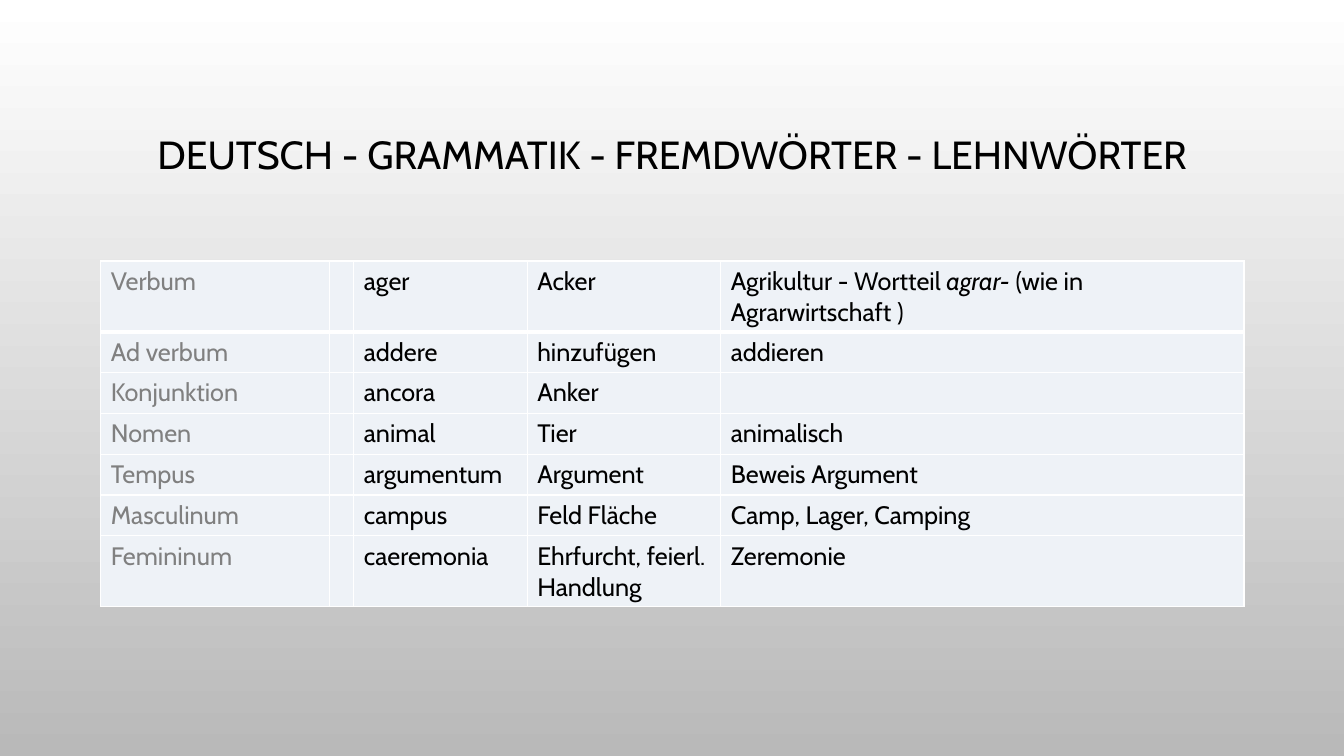
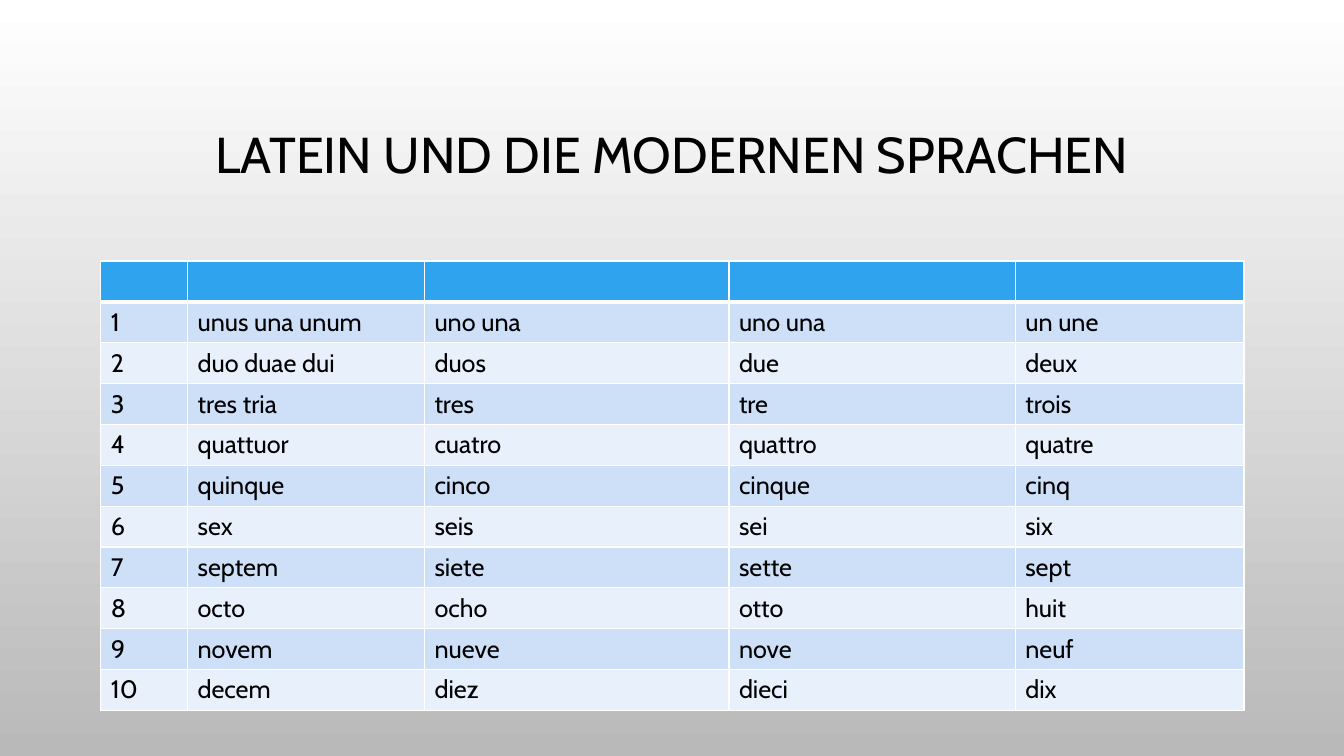
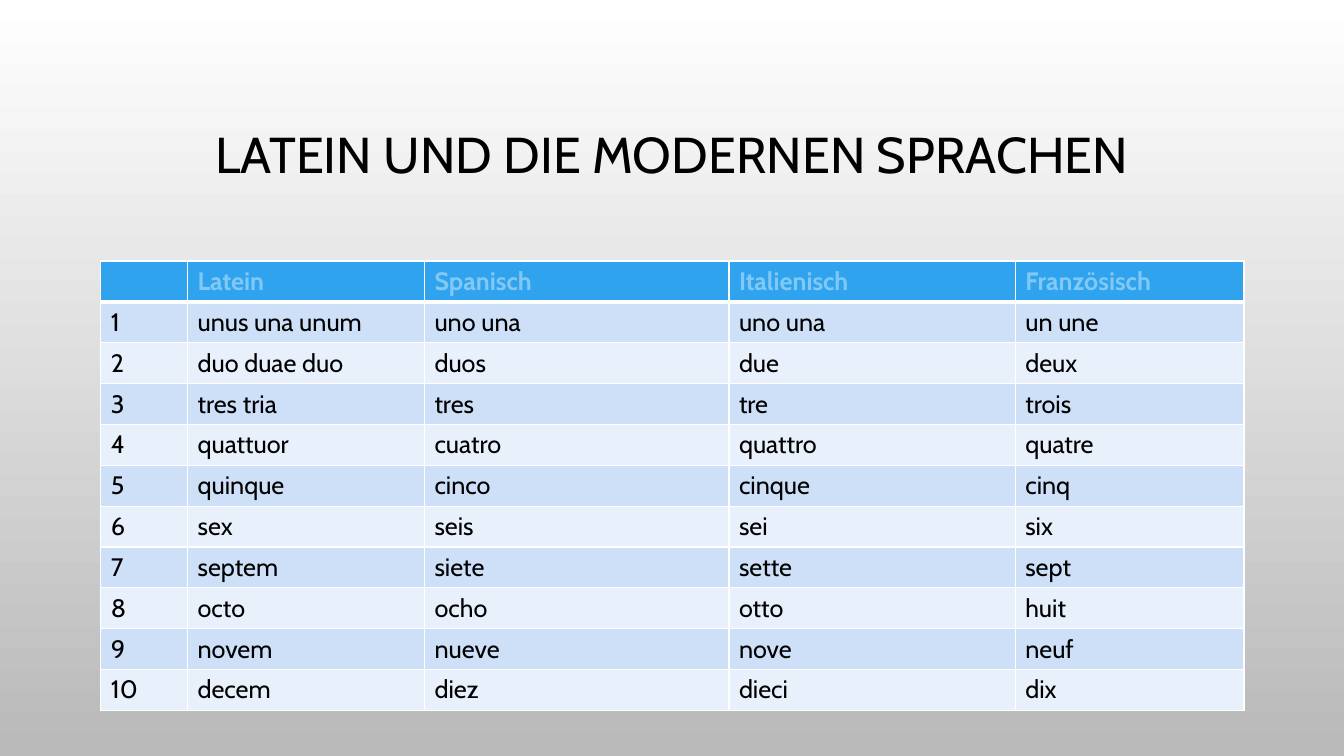
import pptx
import pptx.util
import pptx.dml.color
import pptx.enum.text
import pptx.oxml
import pptx.oxml.ns

Inches, Pt = pptx.util.Inches, pptx.util.Pt

FONT = "Cabin"
BLACK, GRAY, WHITE = "000000", "808080", "FFFFFF"
SHADE = "B9B9B9"
PALE = "EEF2F7"
HEAD, LABEL = "2FA3EE", "82C8F5"
BANDS = ("E8F0FC", "CDE0F8")
LEFT, WIDTH = 1, 11.33
ROW = 4.46 / 11

# Asterisks enclose italic words.
WORDS = [
    ("Verbum", "", "ager", "Acker",
     "Agrikultur - Wortteil *agrar-* (wie in Agrarwirtschaft )"),
    ("Ad verbum", "", "addere", "hinzufügen", "addieren"),
    ("Konjunktion", "", "ancora", "Anker", ""),
    ("Nomen", "", "animal", "Tier", "animalisch"),
    ("Tempus", "", "argumentum", "Argument", "Beweis Argument"),
    ("Masculinum", "", "campus", "Feld Fläche", "Camp, Lager, Camping"),
    ("Femininum", "", "caeremonia", "Ehrfurcht, feierl. Handlung", "Zeremonie"),
]
TONGUES = ("", "Latein", "Spanisch", "Italienisch", "Französisch")
COUNTS = [
    ("unus una unum", "uno una", "uno una", "un une"),
    ("duo duae duo", "duos", "due", "deux"),
    ("tres tria", "tres", "tre", "trois"),
    ("quattuor", "cuatro", "quattro", "quatre"),
    ("quinque", "cinco", "cinque", "cinq"),
    ("sex", "seis", "sei", "six"),
    ("septem", "siete", "sette", "sept"),
    ("octo", "ocho", "otto", "huit"),
    ("novem", "nueve", "nove", "neuf"),
    ("decem", "diez", "dieci", "dix"),
]


def color(code):
    return pptx.dml.color.RGBColor.from_string(code)


def style(run, size, code, bold=False, italic=False):
    font = run.font
    font.name, font.size = FONT, Pt(size)
    font.bold, font.italic = bold, italic
    font.color.rgb = color(code)


def backdrop(deck):
    """Give the master a gradient that darkens downwards."""
    fill = deck.slide_master.background.fill
    fill.gradient()
    fill.gradient_angle = 270
    for stop, code in zip(fill.gradient_stops, (WHITE, SHADE)):
        stop.color.rgb = color(code)


def page(deck, title, size):
    """Add a slide with its centred title."""
    slide = deck.slides.add_slide(deck.slide_layouts[6])
    box = slide.shapes.add_textbox(
        Inches(LEFT), Inches(0.68), Inches(WIDTH), Inches(1.75))
    frame = box.text_frame
    frame.word_wrap = True
    frame.vertical_anchor = pptx.enum.text.MSO_ANCHOR.MIDDLE
    frame.text = title
    par = frame.paragraphs[0]
    par.alignment = pptx.enum.text.PP_ALIGN.CENTER
    par.line_spacing = 0.9
    style(par.runs[0], size, BLACK)
    return slide


def border(cell, top, bottom):
    props = cell._tc.get_or_add_tcPr()
    space = pptx.oxml.ns.nsdecls("a")
    for side, width in (("L", 1), ("R", 1), ("T", top), ("B", bottom)):
        props.append(pptx.oxml.parse_xml(
            f'<a:ln{side} {space} w="{Pt(width)}"><a:solidFill>'
            f'<a:srgbClr val="{WHITE}"/></a:solidFill></a:ln{side}>'))


def write(cell, text, code, bold):
    par = cell.text_frame.paragraphs[0]
    for i, part in enumerate(text.split("*")):
        if part:
            run = par.add_run()
            run.text = part
            style(run, 18, code, bold, italic=i % 2 == 1)


def grid(slide, rows, widths, look):
    """Draw a table; look(row, column) gives fill, text colour and bold."""
    table = slide.shapes.add_table(
        len(rows), len(widths), Inches(LEFT), Inches(2.59),
        Inches(WIDTH), Inches(ROW * len(rows))).table
    table.first_row = table.horz_banding = False
    for col, width in zip(table.columns, widths):
        col.width = Inches(width)
    for r, row in enumerate(rows):
        for c, text in enumerate(row):
            cell = table.cell(r, c)
            fill, code, bold = look(r, c)
            border(cell, 3 if r == 1 else 1, 3 if r == 0 else 1)
            cell.fill.solid()
            cell.fill.fore_color.rgb = color(fill)
            write(cell, text, code, bold)


def plain(r, c):
    return PALE, BLACK if c else GRAY, False


def banded(r, c):
    return (BANDS[r % 2], BLACK, False) if r else (HEAD, LABEL, True)


def numbers(deck, head, counts):
    slide = page(deck, "LATEIN UND DIE MODERNEN SPRACHEN", 36)
    body = [(str(n), *row) for n, row in enumerate(counts, 1)]
    grid(slide, [head, *body], (0.86, 2.35, 3.02, 2.84, 2.27), banded)


def main():
    deck = pptx.Presentation()
    deck.slide_width, deck.slide_height = Inches(13.33), Inches(7.5)
    backdrop(deck)
    slide = page(deck, "DEUTSCH - GRAMMATIK - FREMDWÖRTER - LEHNWÖRTER", 28)
    grid(slide, WORDS, (2.27, 0.23, 1.72, 1.92, 5.19), plain)
    draft = list(COUNTS)
    draft[1] = ("duo duae dui", *COUNTS[1][1:])
    numbers(deck, [""] * len(TONGUES), draft)
    numbers(deck, TONGUES, COUNTS)
    deck.save("out.pptx")


if __name__ == "__main__":
    main()
